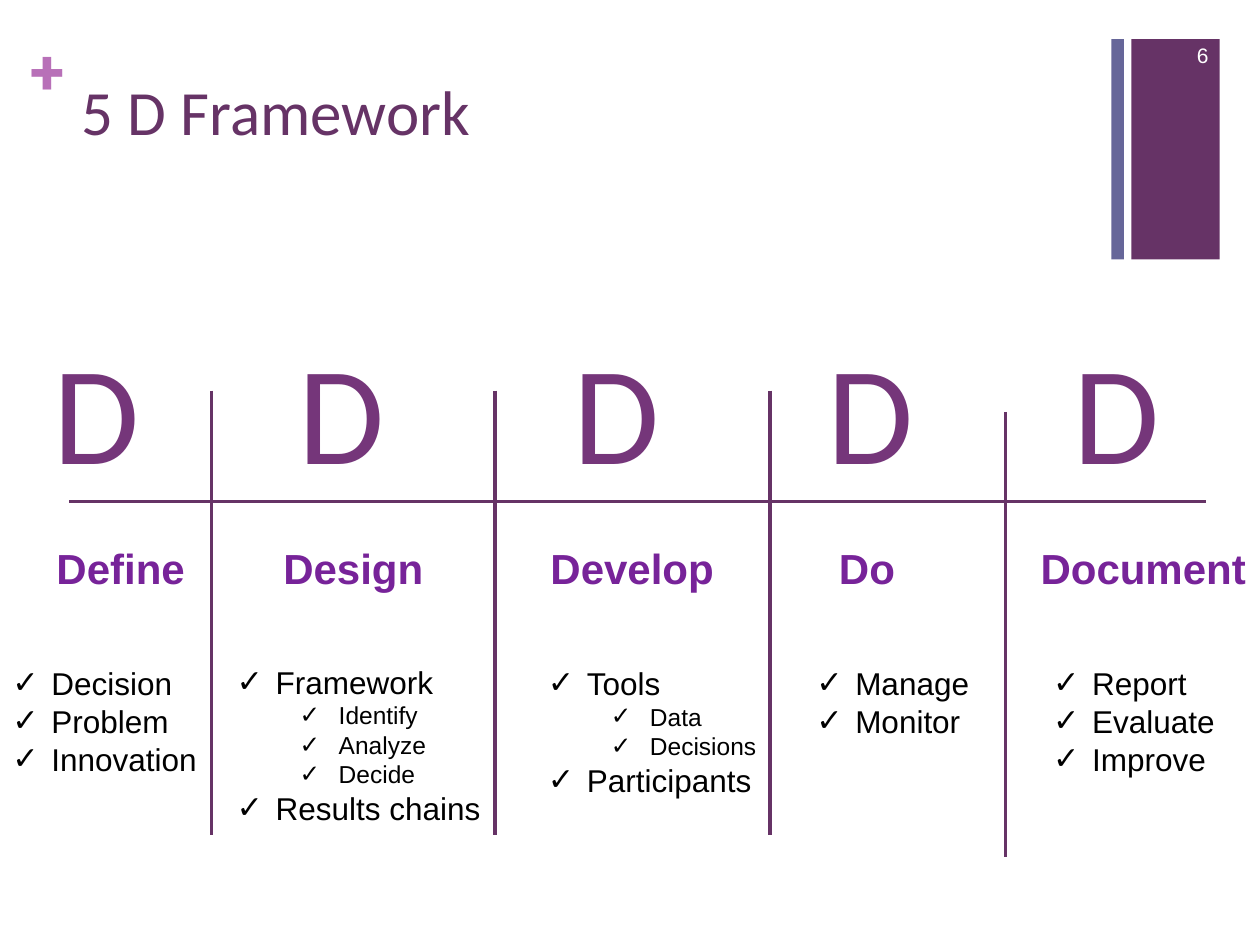
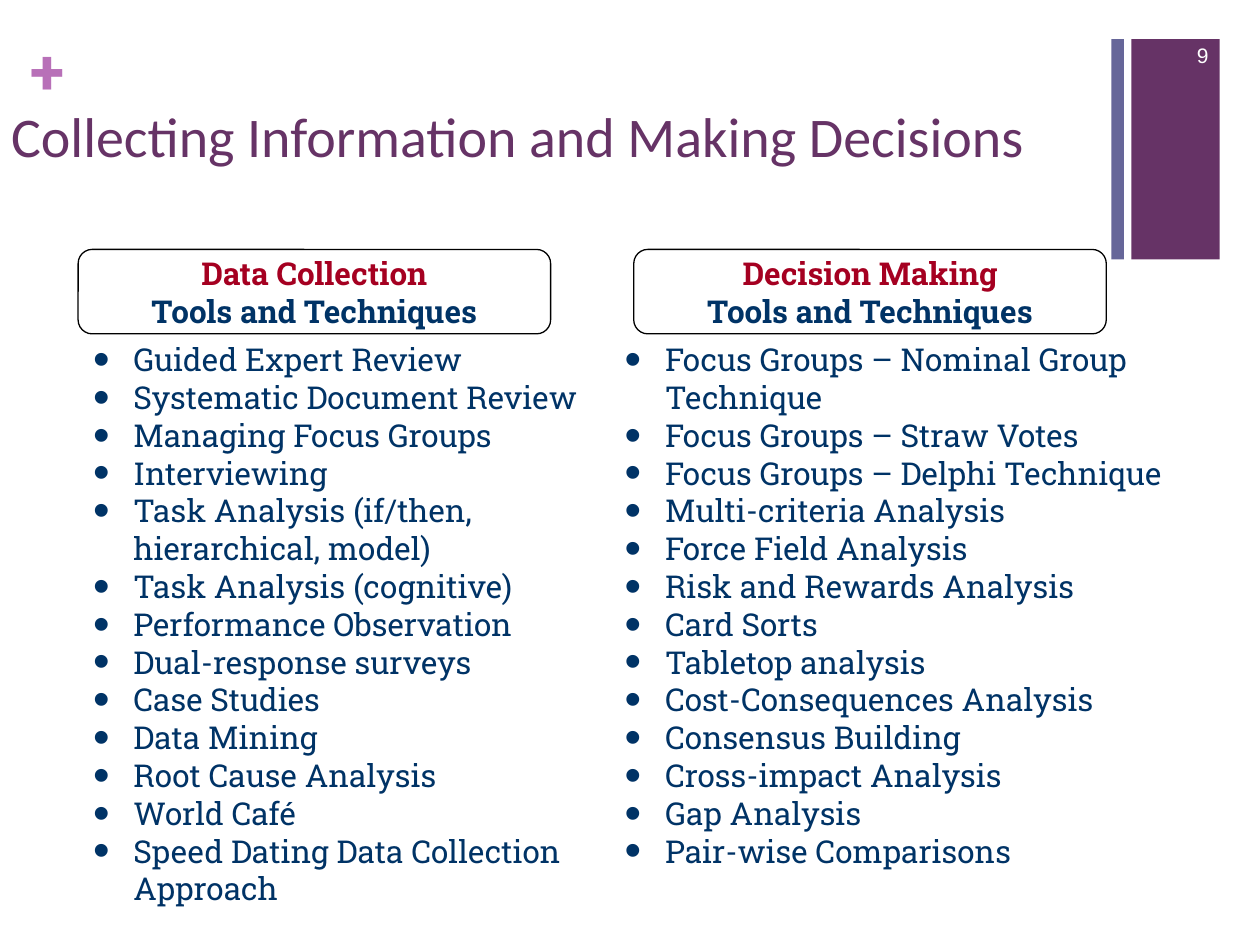
from dataclasses import dataclass

from lxml.etree import SubElement
from pptx import Presentation
from pptx.dml.color import RGBColor
from pptx.enum.shapes import MSO_CONNECTOR, MSO_SHAPE
from pptx.enum.text import MSO_ANCHOR, MSO_AUTO_SIZE, PP_ALIGN
from pptx.oxml.ns import qn
from pptx.util import Inches, Pt


@dataclass(frozen=True)
class Theme:
    plum: str = "663366"
    slate: str = "666699"
    orchid: str = "B870B8"
    letter: str = "75367A"
    violet: str = "772399"
    navy: str = "003366"
    crimson: str = "A50021"
    black: str = "000000"
    white: str = "FFFFFF"
    sans: str = "Arial"
    heading: str = "Calibri"
    slab: str = "Roboto Slab"
    title: int = 36
    long_title: int = 32
    initial: int = 80
    stage: int = 24
    body: int = 18
    detail: int = 14
    number: int = 12


T = Theme()
prs = Presentation()
prs.slide_width, prs.slide_height = Inches(10), Inches(7.5)
UNIT = prs.slide_width / 100


def grid(*cells):
    return [round(c * UNIT) for c in cells]


def write(sp, paras, font, size, color, bold=False, frame=None, para=None, bullet=None):
    tf = sp.text_frame
    for key, value in {"word_wrap": True, **(frame or {})}.items():
        setattr(tf, key, value)
    for i, (text, fmt) in enumerate(paras):
        p = tf.paragraphs[0] if i == 0 else tf.add_paragraph()
        look = {"level": 0, "size": size, "color": color, **fmt}
        for key, value in {"level": look["level"], **(para or {})}.items():
            setattr(p, key, value)
        r = p.add_run()
        r.text = text
        for key, value in {"name": font, "size": Pt(look["size"]), "bold": bold}.items():
            setattr(r.font, key, value)
        r.font.color.rgb = RGBColor.from_string(look["color"])
        if bullet:
            char, percent, indent = bullet
            pPr = p._p.get_or_add_pPr()
            left, hang = grid(indent + 5 * look["level"], -indent)
            pPr.set("marL", str(left))
            pPr.set("indent", str(hang))
            SubElement(pPr, qn("a:buSzPct"), val=str(percent * 1000))
            SubElement(pPr, qn("a:buFont"), typeface=T.sans)
            SubElement(pPr, qn("a:buChar"), char=char)


FIT = {"word_wrap": False, "auto_size": MSO_AUTO_SIZE.SHAPE_TO_FIT_TEXT}
FLUSH = dict.fromkeys(("margin_left", "margin_top", "margin_right", "margin_bottom"), 0)
MIDDLE = {"vertical_anchor": MSO_ANCHOR.MIDDLE}
BANDS = [((89.8, 3.1, 7, 17.5), T.plum), ((88.2, 3.1, 1, 17.5), T.slate)]

pages = [
    ("5 D Framework", (5.5, 5.3, 82.6, 12.2), T.title, "6"),
    ("Collecting Information and Making Decisions", (-0.1, 7.6, 90.7, 12.2), T.long_title, "9"),
]
slides = []
for title, place, size, number in pages:
    s = prs.slides.add_slide(prs.slide_layouts[6])
    slides.append(s)
    for band, color in BANDS:
        sp = s.shapes.add_shape(MSO_SHAPE.RECTANGLE, *grid(*band))
        sp.shadow.inherit = False
        sp.fill.solid()
        sp.fill.fore_color.rgb = RGBColor.from_string(color)
        sp.line.fill.background()
    plus = s.shapes.add_textbox(*grid(2.4, 2.5, 2.9, 6.1))
    write(plus, [("+", {})], T.slab, T.title, T.orchid, True, FLUSH)
    write(s.shapes.add_textbox(*grid(*place)), [(title, {})], T.heading, size, T.plum)
    write(s.shapes.add_textbox(*grid(90.8, 2.6, 6.1, 4)), [(number, {})], T.sans, T.number,
          T.white, frame=MIDDLE, para={"alignment": PP_ALIGN.RIGHT, "line_spacing": 0.8})

framework, decisions = slides

SUB = {"level": 1, "size": T.detail}
stages = [
    ("Define", 3.3, (3.5, 12.3), (0, 52.2, 16.8, 10.1),
     [("Decision", {}), ("Problem", {}), ("Innovation", {})]),
    ("Design", 22.7, (21.5, 13.2), (17.8, 52.1, 21.5, 14.1),
     [("Framework", {}), ("Identify", SUB), ("Analyze", SUB), ("Decide", SUB),
      ("Results chains", {})]),
    ("Develop", 44.5, (42.7, 15.1), (42.5, 52.2, 18.6, 11.8),
     [("Tools", {}), ("Data", SUB), ("Decisions", SUB), ("Participants", {})]),
    ("Do", 64.7, (65.6, 6.5), (63.8, 52.2, 14.2, 7.1),
     [("Manage", {}), ("Monitor", {})]),
    ("Document", 84.2, (81.6, 18.5), (82.6, 52.2, 14.9, 10.1),
     [("Report", {}), ("Evaluate", {}), ("Improve", {})]),
]
for name, letter_x, (name_x, name_w), place, items in stages:
    letter = framework.shapes.add_textbox(*grid(letter_x, 25.3, 9.4, 14.5))
    write(letter, [(name[0], {})], T.heading, T.initial, T.letter, frame=FIT)
    label = framework.shapes.add_textbox(*grid(name_x, 42.6, name_w, 5))
    write(label, [(name, {})], T.sans, T.stage, T.violet, True, FIT)
    tasks = framework.shapes.add_textbox(*grid(*place))
    write(tasks, items, T.sans, T.body, T.black, frame=FIT, bullet=("✓", 100, 3.1))

rules = [(5.5, 39.8, 95.7, 39.8)]
rules += [(x, y, x, y + 35.3) for x, y in [(16.8, 31), (39.3, 31), (61.1, 31), (79.8, 32.7)]]
for ends in rules:
    line = framework.shapes.add_connector(MSO_CONNECTOR.STRAIGHT, *grid(*ends))
    line.line.width = Pt(2)
    line.line.color.rgb = RGBColor.from_string(T.plum)
    SubElement(line._element.spPr, qn("a:effectLst"))

methods = [
    ("Data Collection", 6.2, (6.4, 23.1, 40.8, 49.8), [
        "Guided Expert Review", "Systematic Document Review", "Managing Focus Groups",
        "Interviewing", "Task Analysis (if/then, hierarchical, model)",
        "Task Analysis (cognitive)", "Performance Observation", "Dual-response surveys",
        "Case Studies", "Data Mining", "Root Cause Analysis", "World Café",
        "Speed Dating Data Collection Approach"]),
    ("Decision Making", 50.3, (48.6, 23.1, 49.2, 49.4), [
        "Focus Groups – Nominal Group Technique", "Focus Groups – Straw Votes",
        "Focus Groups – Delphi Technique", "Multi-criteria Analysis", "Force Field Analysis",
        "Risk and Rewards Analysis", "Card Sorts", "Tabletop analysis",
        "Cost-Consequences Analysis", "Consensus Building", "Cross-impact Analysis",
        "Gap Analysis", "Pair-wise Comparisons"]),
]
for topic, head_x, place, items in methods:
    head = decisions.shapes.add_shape(MSO_SHAPE.FLOWCHART_ALTERNATE_PROCESS,
                                      *grid(head_x, 19.8, 37.5, 6.7))
    head.shadow.inherit = False
    head.fill.background()
    head.line.width = Pt(0.75)
    head.line.color.rgb = RGBColor.from_string(T.black)
    write(head, [(topic, {"color": T.crimson}), ("Tools and Techniques", {})], T.slab, T.body,
          T.navy, True, {"word_wrap": False, **MIDDLE}, {"alignment": PP_ALIGN.CENTER})
    tools = decisions.shapes.add_textbox(*grid(*place))
    write(tools, [(item, {}) for item in items], T.slab, T.body, T.navy,
          frame={"margin_top": Inches(0.39)}, bullet=("•", 150, 3.2))

prs.save("out.pptx")
